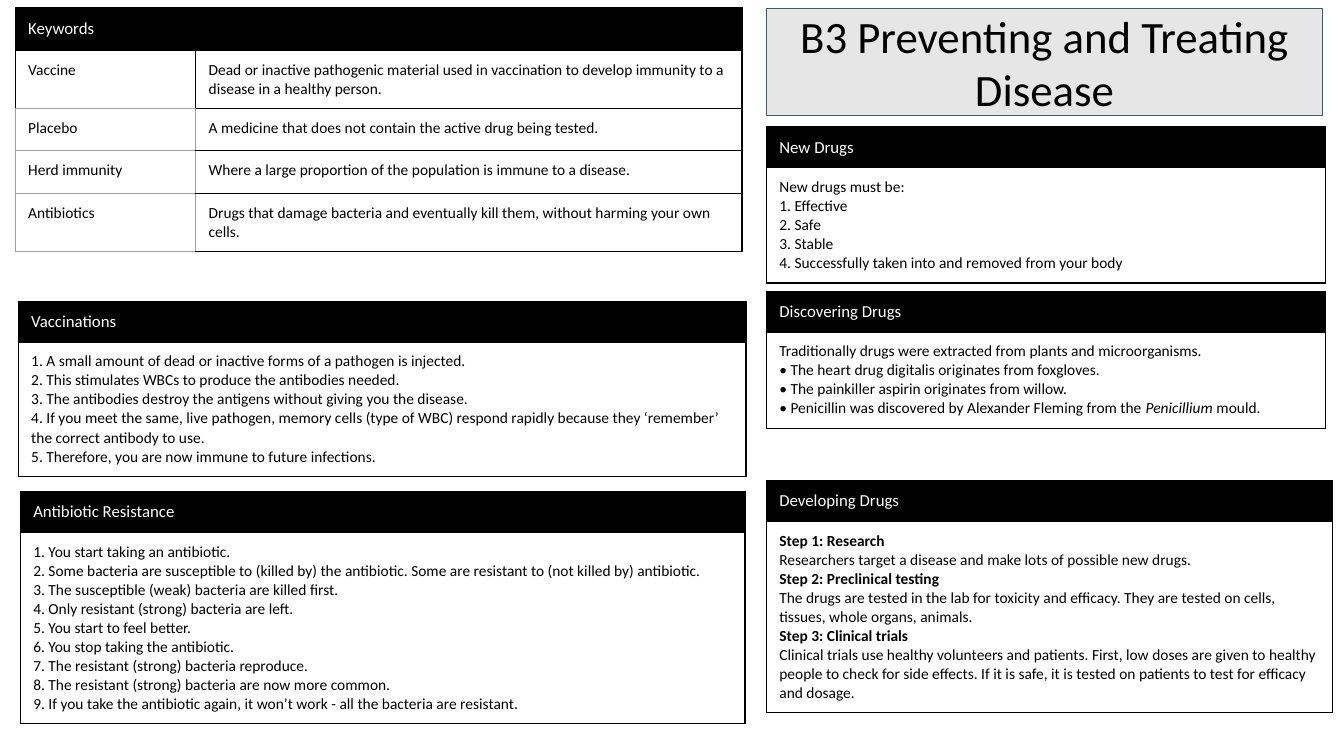
from dataclasses import dataclass

from lxml.etree import SubElement
from pptx import Presentation
from pptx.dml.color import RGBColor
from pptx.enum.text import MSO_ANCHOR, MSO_AUTO_SIZE, PP_ALIGN
from pptx.oxml import parse_xml
from pptx.oxml.ns import nsdecls, qn
from pptx.util import Inches, Pt

BLACK = RGBColor(0x00, 0x00, 0x00)
WHITE = RGBColor(0xFF, 0xFF, 0xFF)
GREY = RGBColor(0x9E, 0x9E, 0x9E)
PALE = RGBColor(0xE7, 0xE6, 0xE6)
SLATE = RGBColor(0x44, 0x54, 0x6A)
FONT = "Calibri"
NO_STYLE = "{2D5ABB26-0587-4C30-8999-92F81FD0307C}"


@dataclass(frozen=True)
class Run:
    text: str
    bold: bool = False
    italic: bool = False


Line = list[Run]


@dataclass(frozen=True)
class Panel:
    left: float
    top: float
    cols: list[float]
    rows: list[float]
    heading: str
    body: list[list[list[Line]]]


def plain(*texts: str) -> list[Line]:
    return [[Run(text)] for text in texts]


def bold(text: str) -> Line:
    return [Run(text, bold=True)]


def card(left: float, top: float, width: float, height: float,
         heading: str, lines: list[Line]) -> Panel:
    return Panel(left, top, [width], [0.4, height], heading, [[lines]])


PANELS = [
    Panel(0.15, 0.08, [1.79, 5.42], [0.42, 0.56, 0.42, 0.42, 0.56], "Keywords", [
        [plain("Vaccine"), plain("Dead or inactive pathogenic material used in vaccination "
                                 "to develop immunity to a disease in a healthy person.")],
        [plain("Placebo"), plain("A medicine that does not contain the active drug being tested.")],
        [plain("Herd immunity"),
         plain("Where a large proportion of the population is immune to a disease.")],
        [plain("Antibiotics"), plain("Drugs that damage bacteria and eventually kill them, "
                                     "without harming your own cells.")],
    ]),
    card(7.6, 2.89, 5.55, 0.91, "Discovering Drugs", [
        *plain("Traditionally drugs were extracted from plants and microorganisms.",
               "• The heart drug digitalis originates from foxgloves.",
               "• The painkiller aspirin originates from willow."),
        [Run("• Penicillin was discovered by Alexander Fleming from the "),
         Run("Penicillium ", italic=True), Run("mould.")],
    ]),
    card(0.18, 2.99, 7.22, 1.28, "Vaccinations", plain(
        "1. A small amount of dead or inactive forms of a pathogen is injected.",
        "2. This stimulates WBCs to produce the antibodies needed.",
        "3. The antibodies destroy the antigens without giving you the disease.",
        "4. If you meet the same, live pathogen, memory cells (type of WBC) respond rapidly "
        "because they ‘remember’ the correct antibody to use.",
        "5. Therefore, you are now immune to future infections.",
    )),
    card(0.2, 4.88, 7.19, 1.8, "Antibiotic Resistance", plain(
        "1. You start taking an antibiotic.",
        "2. Some bacteria are susceptible to (killed by) the antibiotic. "
        "Some are resistant to (not killed by) antibiotic.",
        "3. The susceptible (weak) bacteria are killed first.",
        "4. Only resistant (strong) bacteria are left.",
        "5. You start to feel better.",
        "6. You stop taking the antibiotic.",
        "7. The resistant (strong) bacteria reproduce.",
        "8. The resistant (strong) bacteria are now more common.",
        "9. If you take the antibiotic again, it won’t work - all the bacteria are resistant.",
    )),
    card(7.6, 4.77, 5.62, 1.87, "Developing Drugs", [
        bold("Step 1: Research"),
        *plain("Researchers target a disease and make lots of possible new drugs."),
        bold("Step 2: Preclinical testing"),
        *plain("The drugs are tested in the lab for toxicity and efficacy. "
               "They are tested on cells, tissues, whole organs, animals."),
        bold("Step 3: Clinical trials"),
        *plain("Clinical trials use healthy volunteers and patients. First, low doses are given "
               "to healthy people to check for side effects. If it is safe, it is tested on "
               "patients to test for efficacy and dosage."),
    ]),
    card(7.6, 1.26, 5.55, 1.09, "New Drugs", plain(
        "New drugs must be:", "1. Effective", "2. Safe", "3. Stable",
        "4. Successfully taken into and removed from your body",
    )),
]


def write(tf, lines: list[Line], size: float, colour: RGBColor) -> None:
    tf.word_wrap = True
    for i, line in enumerate(lines):
        p = tf.add_paragraph() if i else tf.paragraphs[0]
        for run in line:
            r = p.add_run()
            r.text = run.text
            r.font.name, r.font.size = FONT, Pt(size)
            r.font.bold, r.font.italic = run.bold, run.italic
            r.font.color.rgb = colour


def grey_sides(row: int, col: int, col_count: int) -> str:
    if col_count == 1 or row == 0:
        return ""
    if col == 0:
        return "B" if row == 1 else "LRTB"
    return "L" if row > 1 else ""


def add_borders(cell, grey: str) -> None:
    tc_pr = cell._tc.get_or_add_tcPr()
    for side in "LRTB":
        ln = SubElement(tc_pr, qn(f"a:ln{side}"), w=str(Pt(0.75 if side in grey else 1)))
        fill = SubElement(ln, qn("a:solidFill"))
        SubElement(fill, qn("a:srgbClr"), val=str(GREY if side in grey else BLACK))


def add_panel(slide, panel: Panel) -> None:
    frame = slide.shapes.add_table(
        len(panel.rows), len(panel.cols), Inches(panel.left), Inches(panel.top),
        Inches(sum(panel.cols)), Inches(sum(panel.rows)))
    table = frame.table
    table.first_row = table.horz_banding = False
    table._tbl.tblPr.find(qn("a:tableStyleId")).text = NO_STYLE
    for column, width in zip(table.columns, panel.cols):
        column.width = Inches(width)
    for row, height in zip(table.rows, panel.rows):
        row.height = Inches(height)
    if len(panel.cols) > 1:
        table.cell(0, 0).merge(table.cell(0, len(panel.cols) - 1))
    write(table.cell(0, 0).text_frame, plain(panel.heading), 12, WHITE)
    for r, cells in enumerate(panel.body, 1):
        for c, lines in enumerate(cells):
            write(table.cell(r, c).text_frame, lines, 11, BLACK)
    for r in range(len(panel.rows)):
        for c in range(len(panel.cols)):
            cell = table.cell(r, c)
            cell.margin_left = cell.margin_right = Inches(0.13)
            cell.margin_top = cell.margin_bottom = Inches(0.1)
            add_borders(cell, grey_sides(r, c, len(panel.cols)))
            if r:
                cell.fill.background()
            else:
                cell.fill.solid()
                cell.fill.fore_color.rgb = BLACK


def add_title(slide, text: str) -> None:
    sp = slide.shapes.title
    sp.left, sp.top, sp.width, sp.height = (Inches(v) for v in (7.6, 0.08, 5.52, 1.07))
    sp._element.spPr.insert(1, parse_xml(
        f'<a:prstGeom {nsdecls("a")} prst="roundRect"><a:avLst/></a:prstGeom>'))
    sp.fill.solid()
    sp.fill.fore_color.rgb = PALE
    sp.line.color.rgb = SLATE
    sp.line.width = Pt(0.75)
    tf = sp.text_frame
    tf.auto_size = MSO_AUTO_SIZE.NONE
    tf.vertical_anchor = MSO_ANCHOR.MIDDLE
    tf.margin_left = tf.margin_right = tf.margin_top = tf.margin_bottom = Inches(0.13)
    write(tf, plain(text), 32, BLACK)
    tf.paragraphs[0].alignment = PP_ALIGN.CENTER


def main() -> None:
    prs = Presentation()
    prs.slide_width, prs.slide_height = Inches(13.33), Inches(7.5)
    slide = prs.slides.add_slide(prs.slide_layouts[5])
    add_title(slide, "B3 Preventing and Treating Disease")
    for panel in PANELS:
        add_panel(slide, panel)
    prs.save("out.pptx")


if __name__ == "__main__":
    main()
